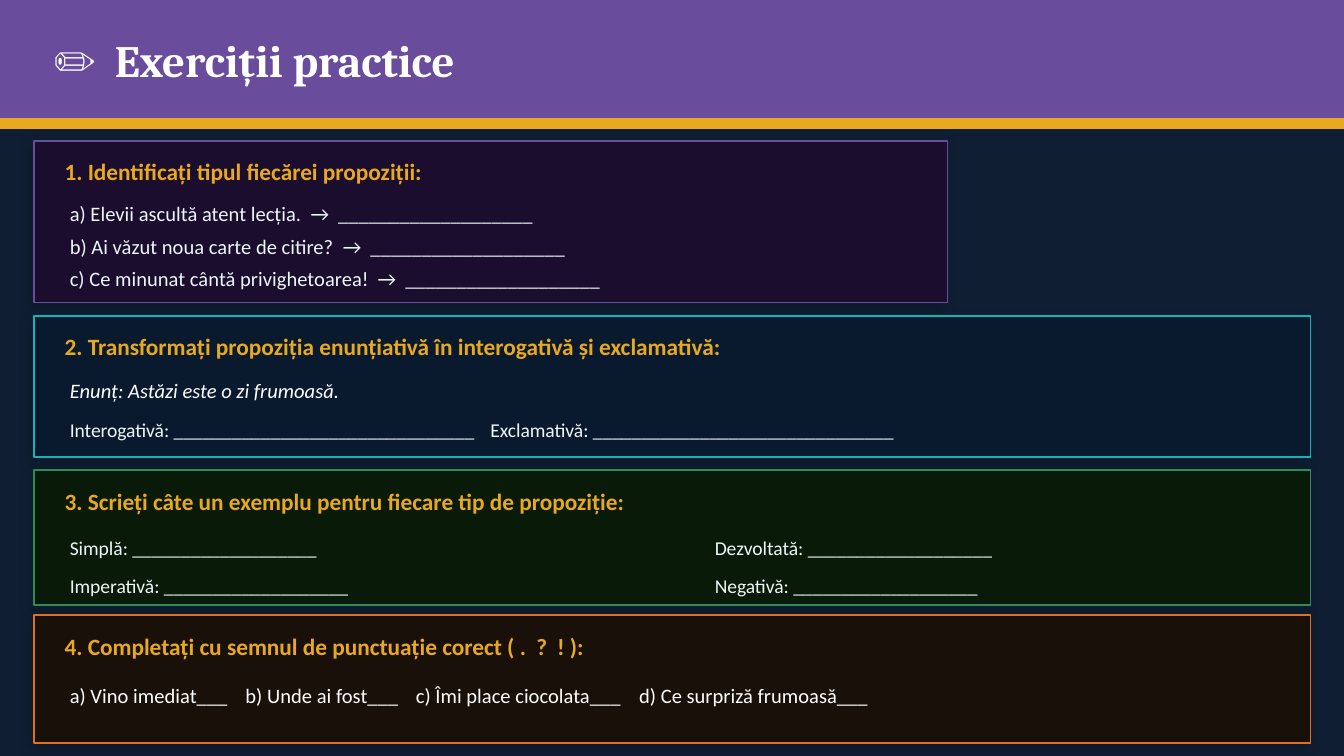
from dataclasses import dataclass

from lxml.etree import SubElement
from pptx import Presentation
from pptx.dml.color import RGBColor
from pptx.enum.shapes import MSO_SHAPE as Shape
from pptx.enum.text import MSO_ANCHOR as Anchor
from pptx.oxml.ns import qn
from pptx.util import Cm, Pt


@dataclass(frozen=True)
class Theme:
    background: str = "0F1E33"
    purple: str = "6A4C9C"
    gold: str = "E8A820"
    white: str = "FFFFFF"
    pale: str = "EDF6F9"
    teal: str = "11B5B5"
    green: str = "2E8B57"
    orange: str = "E07020"
    purple_dark: str = "1A0D2E"
    teal_dark: str = "0A1A2E"
    green_dark: str = "0A1A08"
    orange_dark: str = "1A100A"
    title_font: str = "Cambria"
    body_font: str = "Calibri"
    title_size: float = 24
    heading_size: float = 12.5
    body_size: float = 11
    small_size: float = 10.5


@dataclass(frozen=True)
class Box:
    """A rectangle in centimetres."""
    left: float
    top: float
    width: float
    height: float

    def inner(self, x, y, width, height):
        return Box(self.left + x, self.top + y, width, height)

    def lengths(self):
        return [Cm(value) for value in (self.left, self.top, self.width, self.height)]


THEME = Theme()
SLIDE_WIDTH, SLIDE_HEIGHT = 25.4, 14.29
CARD_LEFT, CARD_WIDTH = 0.64, 24.13
BODY_INDENT = 0.43
TEXT_MARGIN = 1.02
BLANK = "_" * 19
LONG_BLANK = "_" * 31


def add_text(slide, box, text, *, size=THEME.body_size, color=THEME.pale,
             font=THEME.body_font, bold=False, italic=False, tabs=()):
    """Place one line of text; tabs are stops in centimetres from its start."""
    frame = slide.shapes.add_textbox(*box.lengths()).text_frame
    frame.word_wrap = True
    frame.vertical_anchor = Anchor.MIDDLE
    paragraph = frame.paragraphs[0]
    if tabs:
        tab_list = SubElement(paragraph._p.get_or_add_pPr(), qn("a:tabLst"))
        for stop in tabs:
            SubElement(tab_list, qn("a:tab"), pos=str(Cm(stop)), algn="l")
    run = paragraph.add_run()
    run.text = text
    run.font.name = font
    run.font.size = Pt(size)
    run.font.bold = bold
    run.font.italic = italic
    run.font.color.rgb = RGBColor.from_string(color)


def add_panel(slide, box, fill, line):
    panel = slide.shapes.add_shape(Shape.RECTANGLE, *box.lengths())
    panel.shadow.inherit = False
    panel.fill.solid()
    panel.fill.fore_color.rgb = RGBColor.from_string(fill)
    panel.line.color.rgb = RGBColor.from_string(line)
    panel.line.width = Pt(1)
    return panel


def add_soft_shadow(shape):
    effects = shape._element.spPr.find(qn("a:effectLst"))
    shadow = SubElement(effects, qn("a:outerShdw"), blurRad=str(Pt(6)),
                        dist=str(Pt(3)), dir="8100000", algn="bl", rotWithShape="0")
    color = SubElement(shadow, qn("a:srgbClr"), val="000000")
    SubElement(color, qn("a:alpha"), val="15000")


def add_header(slide, box):
    add_panel(slide, box, THEME.purple, THEME.purple)
    add_panel(slide, box.inner(0, box.height, box.width, 0.18), THEME.gold, THEME.gold)
    add_text(slide, box.inner(0.76, 0, box.width - 1.52, box.height),
             "✏️\tExerciții practice", size=THEME.title_size, color=THEME.white,
             font=THEME.title_font, bold=True, tabs=[1.16])


def add_card(slide, box, heading, fill, line, margin=TEXT_MARGIN, tabs=()):
    add_soft_shadow(add_panel(slide, box, fill, line))
    add_text(slide, box.inner(0.33, 0.13, box.width - margin, 0.89), heading,
             size=THEME.heading_size, color=THEME.gold, bold=True, tabs=tabs)


def add_identify_exercise(slide, box):
    margin = 0.76
    add_card(slide, box, "1. Identificați tipul fiecărei propoziții:",
             THEME.purple_dark, THEME.purple, margin)
    sentences = [
        ("a) Elevii ascultă atent lecția.", 4.55),
        ("b) Ai văzut noua carte de citire?", 5.16),
        ("c) Ce minunat cântă privighetoarea!", 5.82),
    ]
    for row, (sentence, arrow) in enumerate(sentences):
        add_text(slide, box.inner(BODY_INDENT, 1.09 + 0.61 * row, box.width - margin, 0.56),
                 f"{sentence}\t→\t{BLANK}", tabs=[arrow, arrow + 0.52])


def add_transform_exercise(slide, box):
    add_card(slide, box,
             "2. Transformați propoziția enunțiativă în interogativă și exclamativă:",
             THEME.teal_dark, THEME.teal)
    width = box.width - TEXT_MARGIN
    add_text(slide, box.inner(BODY_INDENT, 1.09, width, 0.64),
             "Enunț: Astăzi este o zi frumoasă.", color=THEME.white, italic=True)
    add_text(slide, box.inner(BODY_INDENT, 1.83, width, 0.64),
             f"Interogativă: {LONG_BLANK}\tExclamativă: {LONG_BLANK}",
             size=THEME.small_size, tabs=[7.95])


def add_examples_exercise(slide, box):
    add_card(slide, box, "3. Scrieți câte un exemplu pentru fiecare tip de propoziție:",
             THEME.green_dark, THEME.green)
    for index, kind in enumerate(["Simplă", "Dezvoltată", "Imperativă", "Negativă"]):
        row, column = divmod(index, 2)
        add_text(slide, box.inner(BODY_INDENT + 12.19 * column, 1.14 + 0.71 * row, 11.68, 0.66),
                 f"{kind}: {BLANK}", size=THEME.small_size)


def add_punctuation_exercise(slide, box):
    add_card(slide, box, "4. Completați cu semnul de punctuație corect ( .\t?\t! ):",
             THEME.orange_dark, THEME.orange, tabs=[8.92, 9.31])
    sentences = ["a) Vino imediat", "b) Unde ai fost", "c) Îmi place ciocolata",
                 "d) Ce surpriză frumoasă"]
    add_text(slide, box.inner(BODY_INDENT, 1.07, box.width - TEXT_MARGIN, 0.89),
             "\t".join(f"{sentence}___" for sentence in sentences),
             color=THEME.white, tabs=[3.32, 6.54, 10.76])


def main():
    presentation = Presentation()
    presentation.slide_width = Cm(SLIDE_WIDTH)
    presentation.slide_height = Cm(SLIDE_HEIGHT)
    slide = presentation.slides.add_slide(presentation.slide_layouts[6])
    slide.background.fill.solid()
    slide.background.fill.fore_color.rgb = RGBColor.from_string(THEME.background)

    add_header(slide, Box(0, 0, SLIDE_WIDTH, 2.24))
    add_identify_exercise(slide, Box(CARD_LEFT, 2.67, 17.27, 3.05))
    add_transform_exercise(slide, Box(CARD_LEFT, 5.97, CARD_WIDTH, 2.67))
    add_examples_exercise(slide, Box(CARD_LEFT, 8.89, CARD_WIDTH, 2.54))
    add_punctuation_exercise(slide, Box(CARD_LEFT, 11.63, CARD_WIDTH, 2.41))
    presentation.save("out.pptx")


if __name__ == "__main__":
    main()
